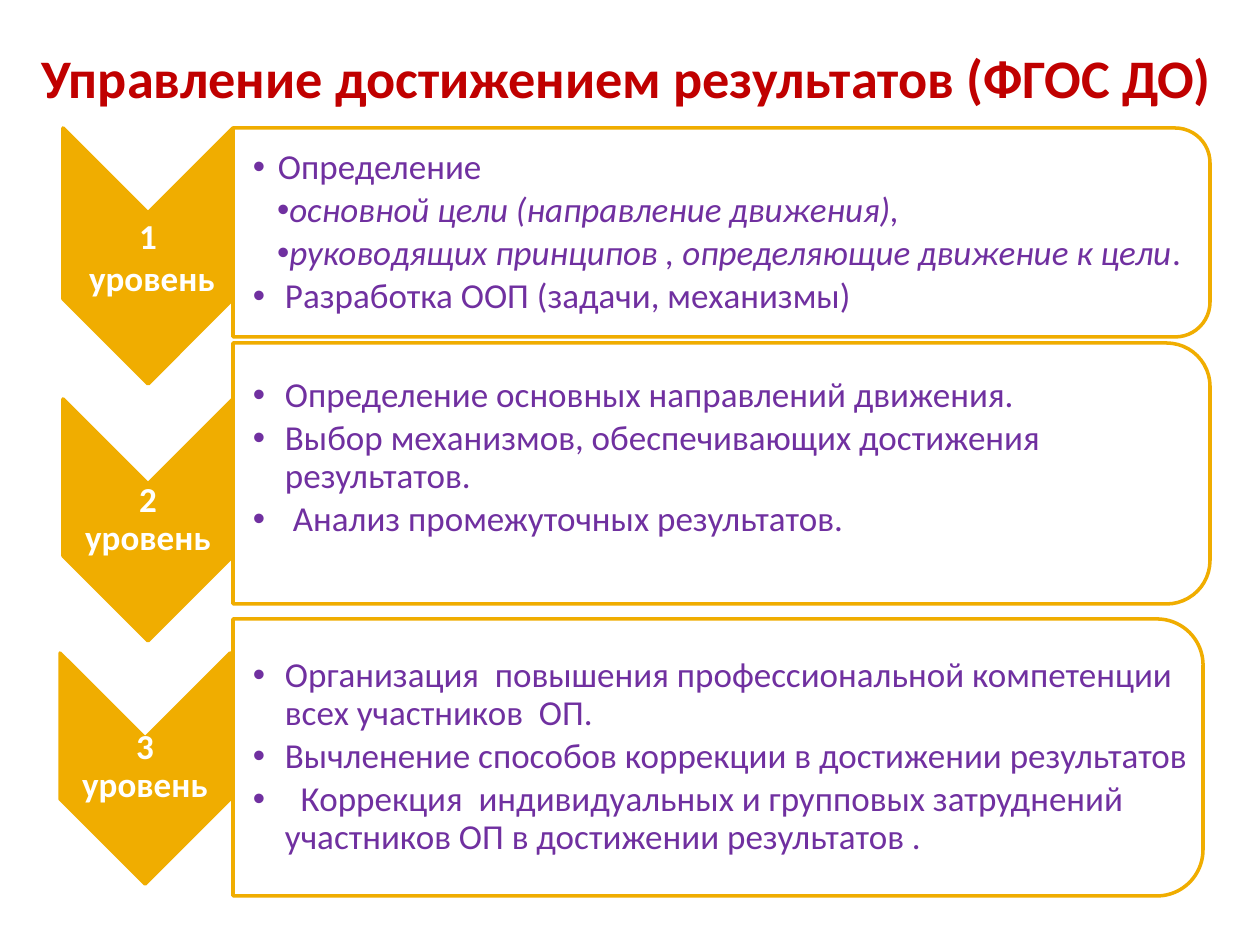
from lxml import etree
from pptx import Presentation
from pptx import util as u
from pptx.dml.color import RGBColor
from pptx.enum import shapes, text
from pptx.oxml.ns import qn

RED = RGBColor(0xC0, 0x00, 0x00)
GOLD = RGBColor(0xF0, 0xAD, 0x00)
WHITE = RGBColor(0xFF, 0xFF, 0xFF)
PURPLE = RGBColor(0x70, 0x30, 0xA0)

HANGING = (32, -32)
LEVELS = [
    dict(
        arrow=(63, 128, 170, 256), panel=(233, 128, 977, 209),
        label=(63, 218, 170, 77), body=(233, 139, 966, 188),
        words=["1", " уровень"], spacing=1.0,
        items=[
            ((25, -25), [("Определение", False)]),
            ((24, 0), [("основной цели (направление движения),", True)]),
            ((24, 0), [("руководящих принципов , определяющие движение к цели", True),
                       (".", False)]),
            (HANGING, [("Разработка ООП (задачи, механизмы)", False)]),
        ],
    ),
    dict(
        arrow=(63, 399, 170, 242), panel=(233, 343, 977, 261),
        label=(63, 484, 170, 73), body=(233, 357, 960, 203),
        words=["2", "уровень"], spacing=0.9,
        items=[
            (HANGING, [("Определение основных направлений движения.", False)]),
            (HANGING, [("Выбор механизмов, обеспечивающих достижения результатов.", False)]),
            (HANGING, [(" Анализ промежуточных результатов.", False)]),
        ],
    ),
    dict(
        arrow=(60, 653, 170, 231), panel=(233, 619, 970, 277),
        label=(60, 733, 170, 69), body=(233, 633, 956, 249),
        words=["3", "уровень"], spacing=0.9,
        items=[
            (HANGING, [("Организация  повышения профессиональной компетенции  "
                        "всех участников  ОП.", False)]),
            (HANGING, [("Вычленение способов коррекции в достижении результатов", False)]),
            (HANGING, [("  Коррекция  индивидуальных и групповых затруднений  "
                        "участников ОП в достижении результатов .", False)]),
        ],
    ),
]


def px(length):
    return u.Emu(round(length * 914400 / 126))


def apply(target, values):
    for name, value in values.items():
        setattr(target, name, value)


class SlideBuilder:
    font = "Calibri"
    size = u.Pt(20)

    def __init__(self, page):
        self.page = page

    def style(self, span, color, **values):
        apply(span.font, dict(name=self.font, size=self.size) | values)
        span.font.color.rgb = color

    def title(self, words, left, top, width, height):
        box = self.page.shapes.title
        apply(box, dict(left=px(left), top=px(top), width=px(width), height=px(height)))
        apply(box.text_frame, dict(vertical_anchor=text.MSO_ANCHOR.MIDDLE, word_wrap=True))
        para = box.text_frame.paragraphs[0]
        para.alignment = text.PP_ALIGN.CENTER
        span = para.add_run()
        span.text = words
        self.style(span, RED, size=u.Pt(31), bold=True)

    def turned_shape(self, kind, fill, left, top, width, height):
        shape = self.page.shapes.add_shape(
            kind, px(left + (width - height) / 2), px(top + (height - width) / 2),
            px(height), px(width))
        shape.rotation = 90
        shape.shadow.inherit = False
        shape.fill.solid()
        shape.fill.fore_color.rgb = fill
        shape.line.color.rgb = GOLD
        shape.line.width = u.Pt(2)
        return shape

    def arrow(self, place):
        self.turned_shape(shapes.MSO_SHAPE.CHEVRON, GOLD, *place)

    def panel(self, place):
        shape = self.turned_shape(shapes.MSO_SHAPE.ROUND_2_SAME_RECTANGLE, WHITE, *place)
        color = shape._element.spPr.find(qn("a:solidFill"))[0]
        etree.SubElement(color, qn("a:alpha"), val="90000")

    def text_box(self, place, inset):
        frame = self.page.shapes.add_textbox(*map(px, place)).text_frame
        apply(frame, dict(
            word_wrap=True, vertical_anchor=text.MSO_ANCHOR.MIDDLE, margin_left=px(inset),
            margin_right=px(1), margin_top=px(1), margin_bottom=px(1)))
        return frame

    def paragraphs(self, frame, count):
        return [frame.paragraphs[0]] + [frame.add_paragraph() for _ in range(count - 1)]

    def label(self, words, place, spacing):
        frame = self.text_box(place, 1)
        for para, word in zip(self.paragraphs(frame, len(words)), words):
            apply(para, dict(alignment=text.PP_ALIGN.CENTER, line_spacing=spacing))
            span = para.add_run()
            span.text = word
            self.style(span, WHITE, bold=True)

    def bullets(self, items, place):
        frame = self.text_box(place, 20)
        for para, (indent, spans) in zip(self.paragraphs(frame, len(items)), items):
            properties = para._p.get_or_add_pPr()
            for name, length in zip(("marL", "indent"), indent):
                properties.set(name, str(px(length)))
            etree.SubElement(properties, qn("a:buFont"), typeface="Arial")
            etree.SubElement(properties, qn("a:buChar"), char="•")
            apply(para, dict(level=1, line_spacing=0.9, space_after=u.Pt(3)))
            for words, italic in spans:
                span = para.add_run()
                span.text = words
                self.style(span, PURPLE, italic=italic)


def main():
    deck = Presentation()
    apply(deck, dict(slide_width=px(1260), slide_height=px(945)))
    builder = SlideBuilder(deck.slides.add_slide(deck.slide_layouts[5]))
    builder.title("Управление достижением результатов (ФГОС ДО)", 15, 38, 1221, 77)
    for level in LEVELS:
        builder.arrow(level["arrow"])
        builder.label(level["words"], level["label"], level["spacing"])
        builder.panel(level["panel"])
        builder.bullets(level["items"], level["body"])
    deck.save("out.pptx")


if __name__ == "__main__":
    main()
